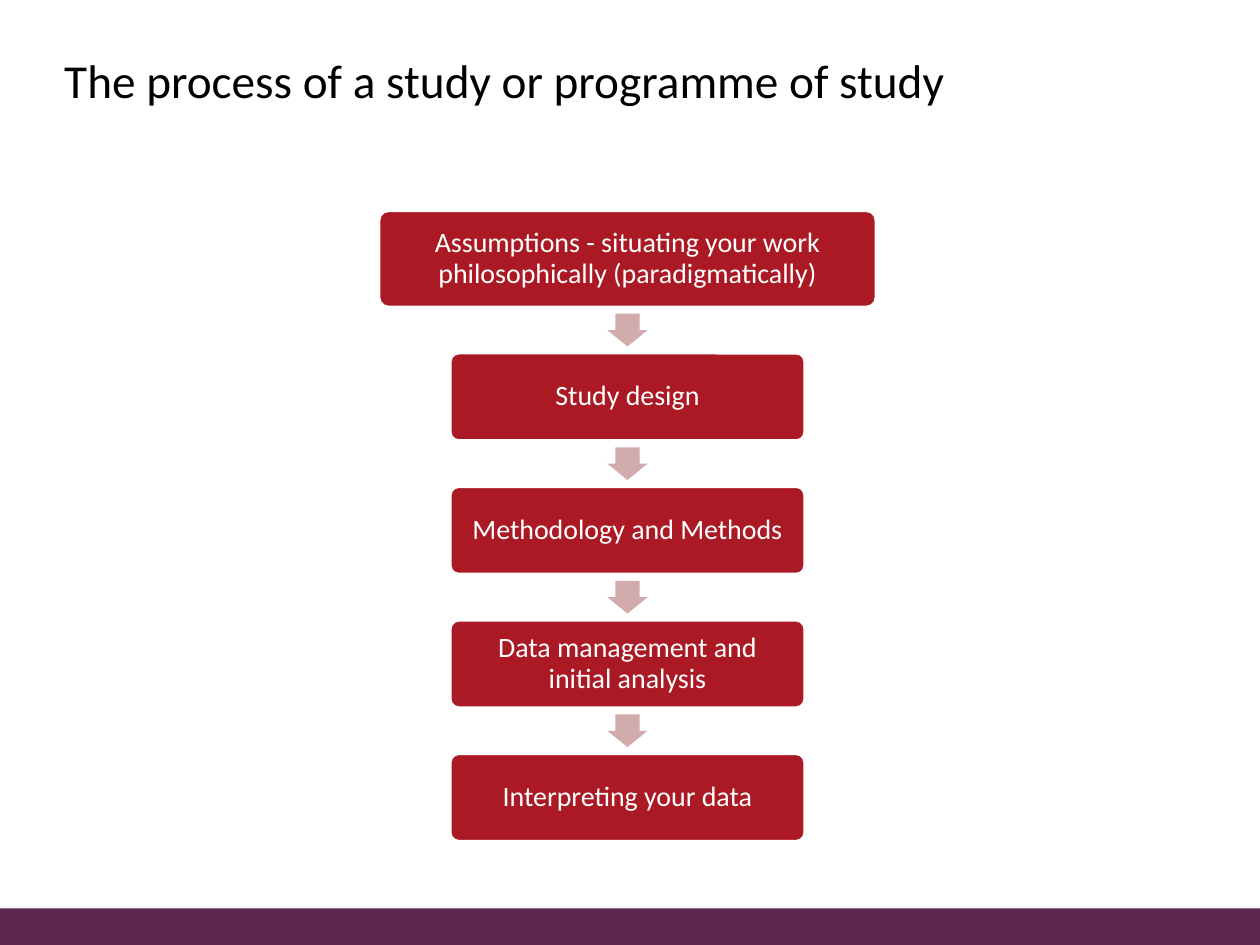
"""Build a slide that shows the steps of a study as a downward flow."""
from pptx import Presentation
from pptx.dml.color import RGBColor
from pptx.enum.shapes import MSO_SHAPE
from pptx.enum.text import MSO_ANCHOR, PP_ALIGN
from pptx.util import Inches, Pt

HUES = {"red": "AB1A24", "pink": "D2ACAC", "plum": "5C284F",
        "white": "FFFFFF", "black": "000000"}
STEPS = [
    ("Assumptions - situating your work philosophically (paradigmatically)", 3.95, 0.77),
    ("Study design", 2.82, 0.7),
    ("Methodology and Methods", 2.82, 0.7),
    ("Data management and\vinitial analysis", 2.82, 0.7),
    ("Interpreting your data", 2.82, 0.7),
]
MID, TOP, GAP = 4.98, 1.67, 0.36
ARROW_W, ARROW_H = 0.32, 0.26


def hue(name):
    return RGBColor.from_string(HUES[name])


def set_font(para, size, color):
    para.font.name = "Calibri"
    para.font.size = Pt(size)
    para.font.color.rgb = hue(color)


def add_block(slide, kind, left, top, width, height, color):
    block = slide.shapes.add_shape(
        kind, Inches(left), Inches(top), Inches(width), Inches(height))
    block.shadow.inherit = False
    block.fill.solid()
    block.fill.fore_color.rgb = hue(color)
    block.line.fill.background()
    return block


def add_title(slide, text):
    title = slide.shapes.title
    title.left, title.top = Inches(0.41), Inches(0.28)
    title.width, title.height = Inches(9.14), Inches(0.71)
    frame = title.text_frame
    frame.text = text
    frame.vertical_anchor = MSO_ANCHOR.MIDDLE
    para = frame.paragraphs[0]
    para.alignment = PP_ALIGN.LEFT
    set_font(para, 27, "black")


def add_step(slide, text, top, width, height):
    step = add_block(slide, MSO_SHAPE.ROUNDED_RECTANGLE,
                     MID - width / 2, top, width, height, "red")
    step.adjustments[0] = 0.1
    step.line.color.rgb = hue("white")
    step.line.width = Pt(2)
    frame = step.text_frame
    frame.word_wrap = True
    frame.vertical_anchor = MSO_ANCHOR.MIDDLE
    frame.margin_left = frame.margin_right = Inches(0.09)
    frame.margin_top = frame.margin_bottom = Inches(0.09)
    frame.text = text
    para = frame.paragraphs[0]
    para.alignment = PP_ALIGN.CENTER
    para.line_spacing = 0.9
    set_font(para, 16, "white")


def add_arrow(slide, top):
    arrow = add_block(slide, MSO_SHAPE.DOWN_ARROW,
                      MID - ARROW_W / 2, top, ARROW_W, ARROW_H, "pink")
    arrow.adjustments[0] = 0.6
    arrow.adjustments[1] = 0.5


def add_flow(slide):
    top = TOP
    for index, (text, width, height) in enumerate(STEPS):
        if index:
            add_arrow(slide, top - (GAP + ARROW_H) / 2)
        add_step(slide, text, top, width, height)
        top += height + GAP


def main():
    deck = Presentation()
    deck.slide_width, deck.slide_height = Inches(10), Inches(7.5)
    slide = deck.slides.add_slide(deck.slide_layouts[5])
    add_block(slide, MSO_SHAPE.RECTANGLE, 0, 7.21, 10, 0.29, "plum")
    add_title(slide, "The process of a study or programme of study")
    add_flow(slide)
    deck.save("out.pptx")


if __name__ == "__main__":
    main()
